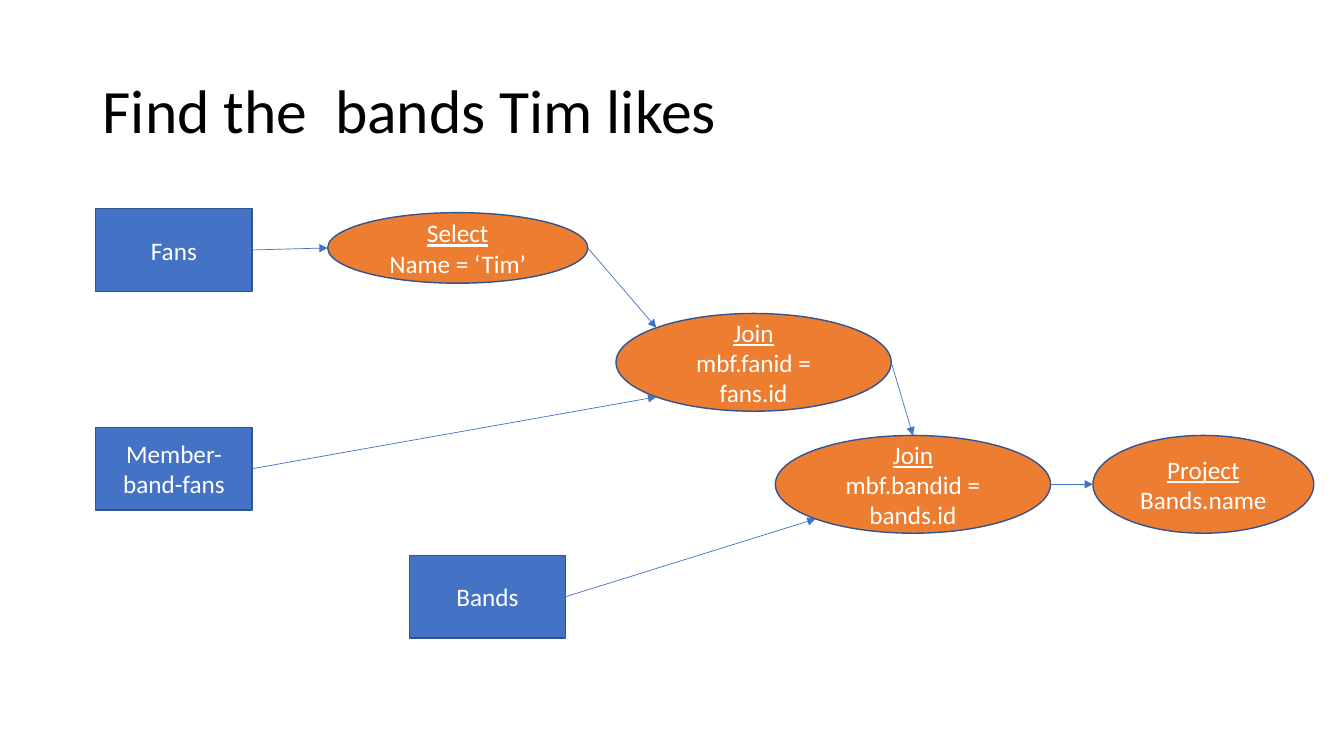
from dataclasses import dataclass
from math import sqrt

from lxml import etree
from pptx import Presentation
from pptx.dml.color import RGBColor
from pptx.enum.shapes import MSO_CONNECTOR, MSO_SHAPE
from pptx.enum.text import MSO_ANCHOR, PP_ALIGN
from pptx.oxml.ns import qn
from pptx.util import Inches, Pt

RECTANGLE, ELLIPSE = MSO_SHAPE.RECTANGLE, MSO_SHAPE.OVAL
STRAIGHT = MSO_CONNECTOR.STRAIGHT
MIDDLE = MSO_ANCHOR.MIDDLE
LEFT, CENTER = PP_ALIGN.LEFT, PP_ALIGN.CENTER

TOP_SITE, RIGHT_SITE = 0, 3
TABLE_SIZE = (1.55, 0.82)
JOIN_SIZE = (2.73, 0.97)

# Directions from an ellipse's centre, in units of its half width and height
DIAGONAL = 1 / sqrt(2)
WEST, EAST, NORTH = (-1, 0), (1, 0), (0, -1)
NORTHWEST, SOUTHWEST = (-DIAGONAL, -DIAGONAL), (-DIAGONAL, DIAGONAL)


@dataclass(frozen=True)
class Theme:
    font: str = "Calibri"
    title_size: int = 44
    label_size: int = 18
    title_color: str = "000000"
    label_color: str = "FFFFFF"
    table_fill: str = "4472C4"
    operator_fill: str = "ED7D31"
    outline: str = "325491"
    arrow: str = "4472C4"


THEME = Theme()


def rgb(value):
    return RGBColor.from_string(value)


def write_text(shape, lines, size=THEME.label_size, color=THEME.label_color,
               align=CENTER, line_spacing=1.0, underline_first=False):
    frame = shape.text_frame
    frame.word_wrap = True
    frame.vertical_anchor = MIDDLE
    for index, line in enumerate(lines):
        paragraph = frame.paragraphs[0] if index == 0 else frame.add_paragraph()
        paragraph.alignment = align
        paragraph.line_spacing = line_spacing
        run = paragraph.add_run()
        run.text = line
        run.font.name = THEME.font
        run.font.size = Pt(size)
        run.font.color.rgb = rgb(color)
        run.font.underline = underline_first and index == 0


def add_title(slide, text):
    box = slide.shapes.add_textbox(Inches(0.92), Inches(0.4), Inches(11.5), Inches(1.45))
    write_text(box, [text], size=THEME.title_size, color=THEME.title_color,
               align=LEFT, line_spacing=0.9)


def add_node(slide, kind, left, top, size, fill):
    width, height = size
    shape = slide.shapes.add_shape(kind, Inches(left), Inches(top),
                                   Inches(width), Inches(height))
    shape.shadow.inherit = False
    shape.fill.solid()
    shape.fill.fore_color.rgb = rgb(fill)
    shape.line.color.rgb = rgb(THEME.outline)
    shape.line.width = Pt(1)
    return shape


def add_table_box(slide, name, left, top):
    """Draw a source relation of the query."""
    box = add_node(slide, RECTANGLE, left, top, TABLE_SIZE, THEME.table_fill)
    write_text(box, [name])
    return box


def add_operator(slide, name, condition, left, top, size):
    """Draw a relational operator with its underlined name."""
    ellipse = add_node(slide, ELLIPSE, left, top, size, THEME.operator_fill)
    write_text(ellipse, [name, condition], underline_first=True)
    return ellipse


def edge_point(shape, direction):
    across, down = direction
    return (round(shape.left + shape.width * (1 + across) / 2),
            round(shape.top + shape.height * (1 + down) / 2))


def add_arrow(slide, source, target, direction):
    """Point from the source's right side to one edge point of the target."""
    connector = slide.shapes.add_connector(
        STRAIGHT, *edge_point(source, EAST), *edge_point(target, direction))
    if source.auto_shape_type == RECTANGLE:
        connector.begin_connect(source, RIGHT_SITE)
    if direction == NORTH:
        connector.end_connect(target, TOP_SITE)
    connector.line.color.rgb = rgb(THEME.arrow)
    connector.line.width = Pt(0.5)
    etree.SubElement(connector.line._get_or_add_ln(), qn("a:tailEnd"), type="triangle")
    etree.SubElement(connector._element.spPr, qn("a:effectLst"))


def main():
    presentation = Presentation()
    presentation.slide_width = Inches(13.33)
    presentation.slide_height = Inches(7.5)
    slide = presentation.slides.add_slide(presentation.slide_layouts[6])

    add_title(slide, "Find the  bands Tim likes")

    fans = add_table_box(slide, "Fans", 0.95, 2.07)
    member_band_fans = add_table_box(slide, "Member-band-fans", 0.95, 4.24)
    bands = add_table_box(slide, "Bands", 4.06, 5.51)

    select = add_operator(slide, "Select", "Name = ‘Tim’", 3.25, 2.11, (2.58, 0.7))
    join_fans = add_operator(slide, "Join", "mbf.fanid = fans.id", 6.11, 3.11, JOIN_SIZE)
    join_bands = add_operator(slide, "Join", "mbf.bandid = bands.id", 7.69, 4.32, JOIN_SIZE)
    project = add_operator(slide, "Project", "Bands.name", 10.84, 4.32, (2.19, 0.97))

    for source, target, direction in (
        (fans, select, WEST),
        (select, join_fans, NORTHWEST),
        (member_band_fans, join_fans, SOUTHWEST),
        (join_fans, join_bands, NORTH),
        (bands, join_bands, SOUTHWEST),
        (join_bands, project, WEST),
    ):
        add_arrow(slide, source, target, direction)

    presentation.save("out.pptx")


if __name__ == "__main__":
    main()
